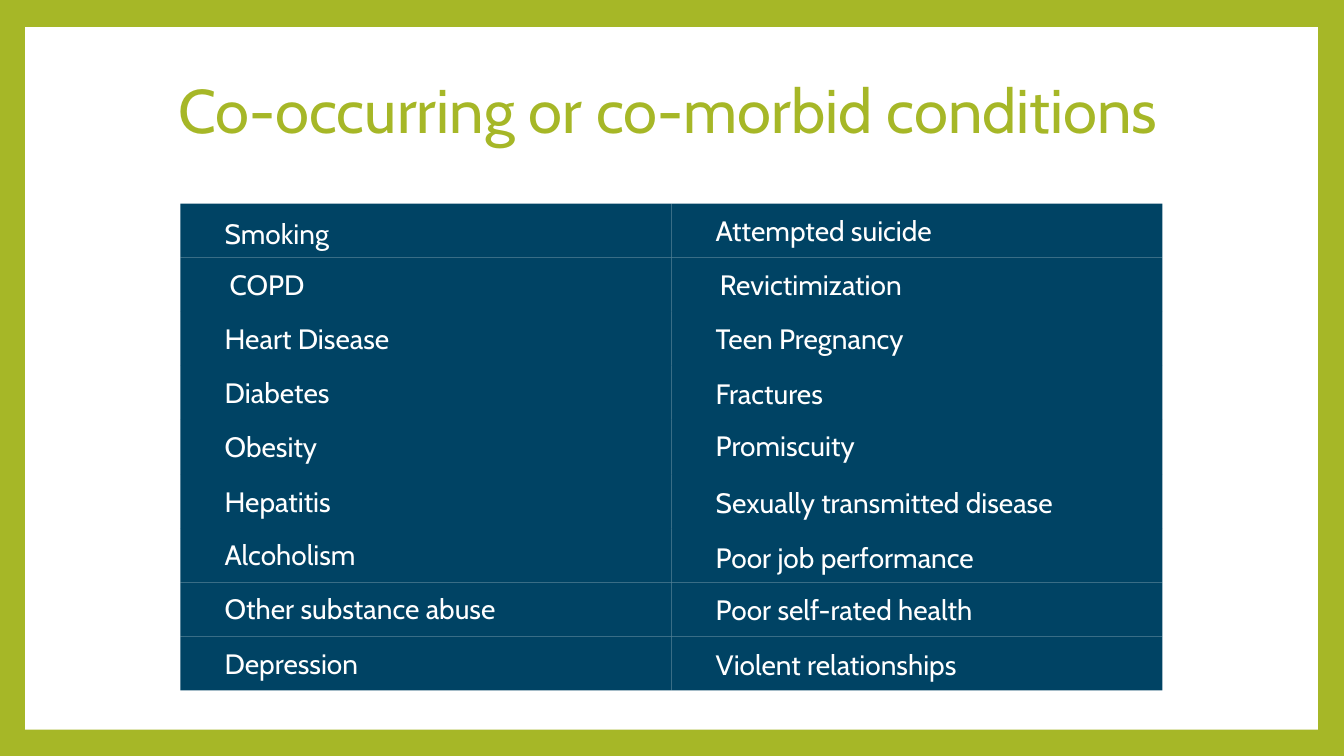
from dataclasses import dataclass

from pptx import Presentation
from pptx.dml.color import RGBColor
from pptx.enum import shapes, text
from pptx.util import Inches, Pt


@dataclass(frozen=True)
class Theme:
    font: str = "Cabin"
    green: str = "A6B727"
    navy: str = "004364"
    white: str = "FFFFFF"
    title_size: int = 44
    body_size: int = 20


@dataclass(frozen=True)
class Box:
    left: float
    top: float
    width: float
    height: float

    def emu(self) -> list[int]:
        return [Inches(v) for v in (self.left, self.top, self.width, self.height)]


@dataclass(frozen=True)
class Condition:
    name: str
    top: float
    indent: float = 0


@dataclass(frozen=True)
class Column:
    left: float
    label_left: float
    conditions: tuple[Condition, ...]


THEME = Theme()
PANEL = Box(0.25, 0.27, 12.82, 6.97)
TITLE = Box(1.67, 0.5, 10, 1.25)
GRID_TOP, GRID_HEIGHT = 2.02, 4.83
COLUMN_WIDTH = 4.87
LABEL_WIDTH, LABEL_HEIGHT = 4.52, 0.44

COLUMNS = (
    Column(1.79, 2.13, (
        Condition("Smoking", 2.1),
        Condition("COPD", 2.6, 0.05),
        Condition("Heart Disease", 3.14),
        Condition("Diabetes", 3.68),
        Condition("Obesity", 4.21),
        Condition("Hepatitis", 4.76),
        Condition("Alcoholism", 5.28),
        Condition("Other substance abuse", 5.82),
        Condition("Depression", 6.36),
    )),
    Column(6.66, 7, (
        Condition("Attempted suicide", 2.07),
        Condition("Revictimization", 2.6, 0.04),
        Condition("Teen Pregnancy", 3.14),
        Condition("Fractures", 3.69),
        Condition("Promiscuity", 4.2),
        Condition("Sexually transmitted disease", 4.77),
        Condition("Poor job performance", 5.31),
        Condition("Poor self-rated health", 5.83),
        Condition("Violent relationships", 6.37),
    )),
)


def add_rect(slide, box: Box, color: str) -> None:
    sp = slide.shapes.add_shape(shapes.MSO_SHAPE.RECTANGLE, *box.emu())
    sp.shadow.inherit = False
    sp.fill.solid()
    sp.fill.fore_color.rgb = RGBColor.from_string(color)
    sp.line.fill.background()


def add_text(slide, box: Box, words: str, size: int, color: str):
    tf = slide.shapes.add_textbox(*box.emu()).text_frame
    tf.word_wrap = True
    r = tf.paragraphs[0].add_run()
    r.text = words
    r.font.name = THEME.font
    r.font.size = Pt(size)
    r.font.color.rgb = RGBColor.from_string(color)
    return tf


def add_title(slide) -> None:
    tf = add_text(slide, TITLE, "Co-occurring or co-morbid conditions",
                  THEME.title_size, THEME.green)
    tf.vertical_anchor = text.MSO_ANCHOR.MIDDLE
    tf.paragraphs[0].line_spacing = 0.9


def add_column(slide, column: Column) -> None:
    row_height = GRID_HEIGHT / len(column.conditions)
    for row, condition in enumerate(column.conditions):
        cell = Box(column.left, GRID_TOP + row * row_height, COLUMN_WIDTH, row_height)
        add_rect(slide, cell, THEME.navy)
        label = Box(column.label_left + condition.indent, condition.top,
                    LABEL_WIDTH, LABEL_HEIGHT)
        tf = add_text(slide, label, condition.name, THEME.body_size, THEME.white)
        tf.auto_size = text.MSO_AUTO_SIZE.SHAPE_TO_FIT_TEXT


def main() -> None:
    prs = Presentation()
    prs.slide_width, prs.slide_height = Inches(13.33), Inches(7.5)
    slide = prs.slides.add_slide(prs.slide_layouts[6])
    slide.background.fill.solid()
    slide.background.fill.fore_color.rgb = RGBColor.from_string(THEME.green)
    add_rect(slide, PANEL, THEME.white)
    add_title(slide)
    for column in COLUMNS:
        add_column(slide, column)
    prs.save("out.pptx")


if __name__ == "__main__":
    main()
